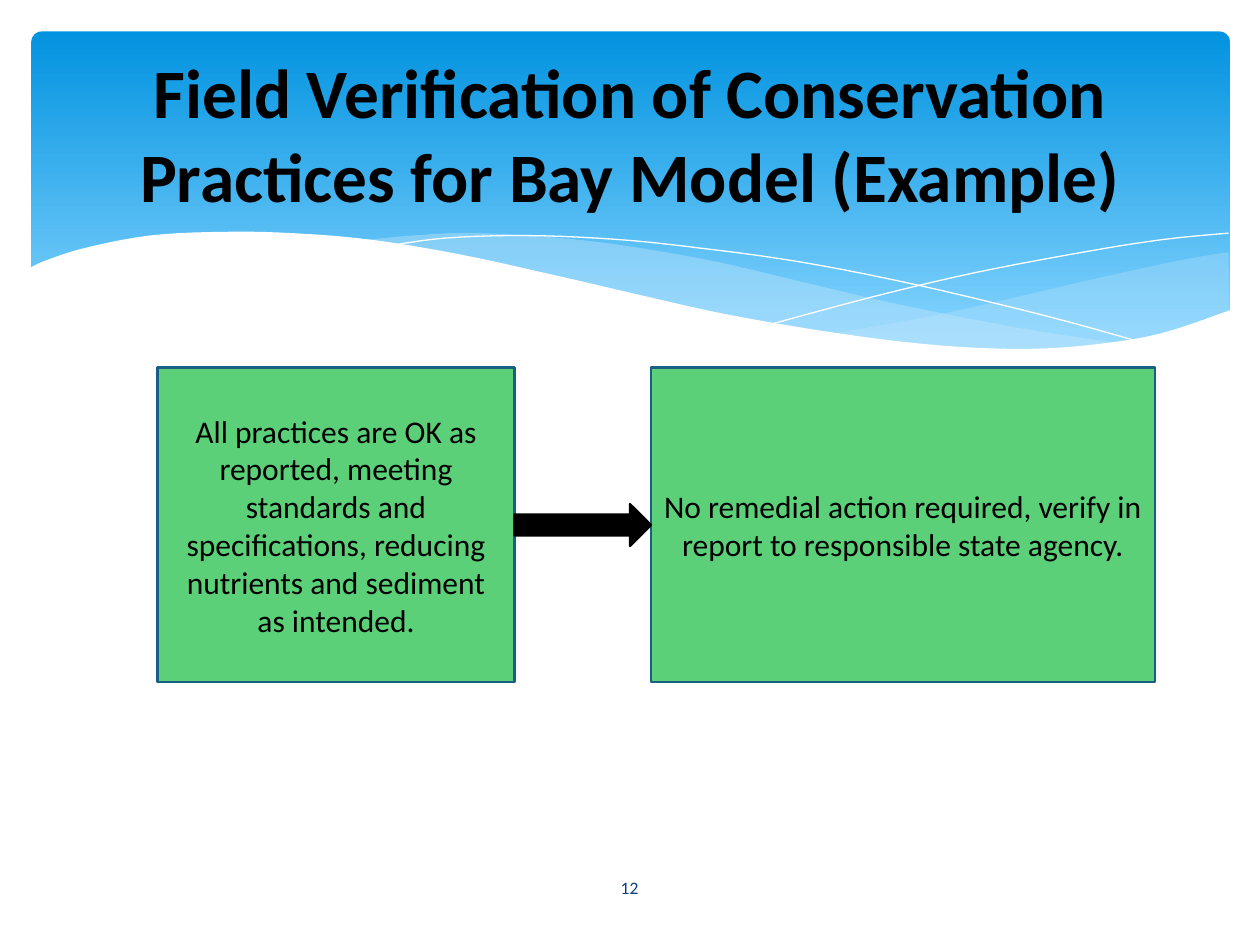
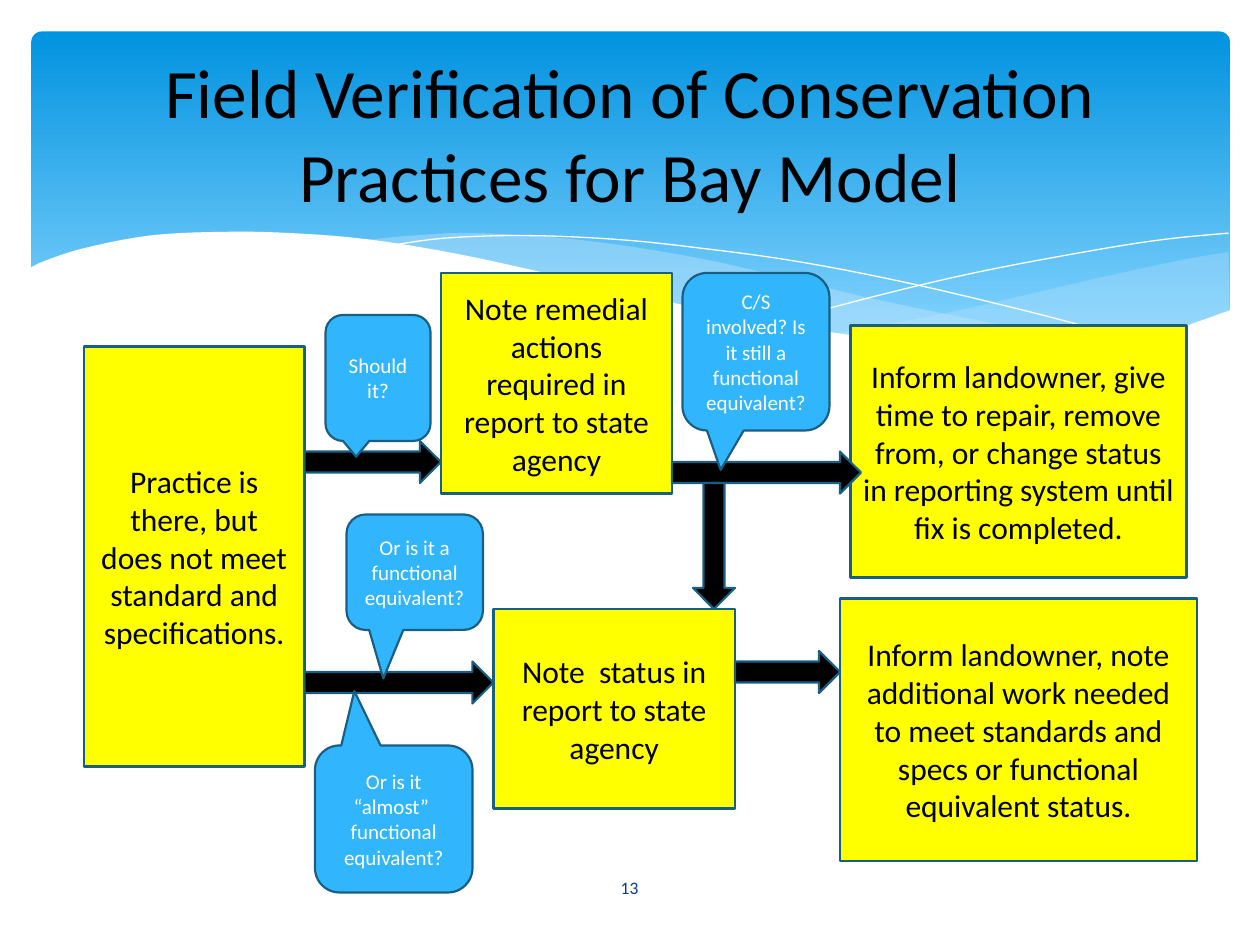
"""Build two slides on field checks of conservation practices."""
from dataclasses import dataclass
from typing import Optional

from lxml.etree import SubElement
from pptx import Presentation
from pptx.dml.color import RGBColor as Rgb
from pptx.enum.shapes import MSO_SHAPE as Kind
from pptx.enum.text import MSO_ANCHOR as Anchor, PP_ALIGN as Align
from pptx.oxml.ns import qn
from pptx.util import Pt

Point = tuple[float, float]
Frame = tuple[float, float, float, float]


@dataclass(frozen=True)
class Theme:
    font: str = "Calibri"
    ink: str = "000000"
    white: str = "FFFFFF"
    sky: str = "0293E0"
    haze: str = "83D3FE"
    mist: str = "C6E7FC"
    edge: str = "195F84"
    green: str = "5BD078"
    yellow: str = "FFFF00"
    blue: str = "31B6FD"
    navy: str = "073E87"
    head: float = 39.6
    body: float = 18
    note: float = 12
    foot: float = 10
    stroke: float = 1.25


THEME = Theme()


@dataclass(frozen=True)
class Wave:
    curves: tuple[tuple[Point, ...], ...]
    fill: Optional[str] = None
    alpha: int = 100


@dataclass(frozen=True)
class Item:
    frame: Frame
    fill: str
    text: str = ""
    kind: Kind = Kind.RECTANGLE
    edge: str = THEME.edge
    ink: str = THEME.ink
    size: float = THEME.body
    tail: Optional[Point] = None


@dataclass(frozen=True)
class Page:
    title: str
    bold: bool
    number: int
    items: tuple[Item, ...]


WAVES = (
    Wave((((702, 144), (673, 149), (620, 160.6), (542, 178.6), (476, 190.8)),
          ((476, 190.8), (507.6, 195.1), (545, 198.7), (586, 200),
           (628, 197.3), (663, 190.8), (702.7, 177.8))), THEME.mist, 29),
    Wave((((643, 196.6), (581, 187.2), (508.3, 172.8), (452.9, 159.8),
           (399.6, 147.6), (334.8, 137.5), (273.6, 133.2), (236.2, 134.6),
           (206, 137.5)),
          ((206, 137.5), (260.6, 146.2), (323.3, 159.8), (381.6, 172.8),
           (445, 185.8), (500.4, 194.4), (548, 199.4), (589, 200.2),
           (617, 199.4), (643, 196.6))), THEME.mist, 40),
    Wave((((222.5, 140.4), (254.2, 136.1), (299.5, 134.6), (352, 136.8),
           (400.3, 141.8), (458, 149.8), (523.4, 162.7), (598.3, 180.7),
           (653, 195.8)),)),
    Wave((((441.4, 185), (500.4, 169.2), (558.7, 155.5), (623.5, 143.3),
           (665.3, 136.8), (702, 133.2)),)),
    Wave((((703.4, 177.1), (662.4, 190.8), (621.4, 197.3), (582.5, 199.4),
           (535.7, 197.3), (481, 190.8), (416.9, 180), (362.2, 167.8),
           (321.8, 158.4), (262.8, 145.4), (210.2, 136.8), (165.6, 133.2),
           (127.4, 132.5), (85.7, 134.6), (48.2, 141.8), (25.9, 149),
           (16.6, 153.4)),
          ((16.6, 237), (703.4, 237))), THEME.white),
)


def box(frame: Frame, text: str, fill: str) -> Item:
    return Item(frame, fill, text)


def arrow(frame: Frame, kind: Kind = Kind.RIGHT_ARROW,
          edge: str = THEME.edge) -> Item:
    return Item(frame, THEME.ink, kind=kind, edge=edge)


def bubble(frame: Frame, text: str, tail: Optional[Point] = None) -> Item:
    return Item(frame, THEME.blue, text, Kind.ROUNDED_RECTANGULAR_CALLOUT,
                ink=THEME.white, size=THEME.note, tail=tail)


PAGES = (
    Page("Field Verification of Conservation Practices for Bay Model (Example)",
         True, 12, (
             box((90, 210, 204, 180),
                 "All practices are OK as reported, meeting standards and "
                 "specifications, reducing nutrients and sediment as intended.",
                 THEME.green),
             box((372, 210, 288, 180),
                 "No remedial action required, verify in report to "
                 "responsible state agency.", THEME.green),
             arrow((294, 288, 78, 24), edge=THEME.ink),
         )),
    Page("Field Verification of Conservation Practices for Bay Model",
         False, 13, (
             box((48, 198, 126, 240),
                 "Practice is there, but does not meet standard and "
                 "specifications.", THEME.yellow),
             box((252, 156, 132, 126),
                 "Note remedial actions required in report to state agency",
                 THEME.yellow),
             box((282, 348, 138, 114),
                 "Note  status in report to state agency", THEME.yellow),
             box((486, 186, 192, 144),
                 "Inform landowner, give time to repair, remove from, or "
                 "change status in reporting system until fix is completed.",
                 THEME.yellow),
             box((480, 342, 204, 150),
                 "Inform landowner, note additional work needed to meet "
                 "standards and specs or functional equivalent status.",
                 THEME.yellow),
             arrow((174, 252, 78, 24)),
             arrow((174, 378, 108, 24)),
             arrow((384, 258, 108, 24)),
             bubble((186, 180, 60, 72), "Should it?"),
             bubble((198, 294, 78, 66), "Or is it a functional equivalent?",
                    (-0.23, 0.92)),
             arrow((420, 372, 60, 24)),
             bubble((390, 156, 84, 90),
                    "C/S involved? Is it still a functional equivalent?",
                    (-0.24, 0.75)),
             bubble((180, 426, 90, 84),
                    "Or is it “almost”  functional equivalent?",
                    (-0.25, -0.87)),
             arrow((396, 276, 24, 72), Kind.DOWN_ARROW),
         )),
)


def place(frame: Frame) -> list[Pt]:
    return [Pt(side) for side in frame]


def paint(shape, fill: Optional[str], edge: Optional[str] = None,
          width: float = THEME.stroke) -> None:
    shape.shadow.inherit = False
    if fill:
        shape.fill.solid()
        shape.fill.fore_color.rgb = Rgb.from_string(fill)
    else:
        shape.fill.background()
    if edge:
        shape.line.color.rgb = Rgb.from_string(edge)
        shape.line.width = Pt(width)
    else:
        shape.line.fill.background()


def write(shape, text: str, size: float, ink: str, bold: bool = False) -> None:
    frame = shape.text_frame
    frame.word_wrap = True
    frame.vertical_anchor = Anchor.MIDDLE
    line = frame.paragraphs[0]
    line.alignment = Align.CENTER
    run = line.add_run()
    run.text = text
    run.font.name = THEME.font
    run.font.size = Pt(size)
    run.font.bold = bold
    run.font.color.rgb = Rgb.from_string(ink)


def label(slide, frame: Frame, text: str, size: float, ink: str,
          bold: bool = False) -> None:
    write(slide.shapes.add_textbox(*place(frame)), text, size, ink, bold)


def smooth(knots: tuple[Point, ...], steps: int = 5) -> list[Point]:
    if len(knots) < 3:
        return list(knots)
    ends = (knots[0], *knots, knots[-1])
    curve = [knots[0]]
    for a, b, c, d in zip(ends, ends[1:], ends[2:], ends[3:]):
        for step in range(1, steps + 1):
            t = step / steps
            x, y = (
                (2 * q + (r - p) * t + (2 * p - 5 * q + 4 * r - s) * t ** 2
                 + (3 * q - p - 3 * r + s) * t ** 3) / 2
                for p, q, r, s in zip(a, b, c, d))
            curve.append((x, y))
    return curve


def draw_wave(slide, wave: Wave) -> None:
    dots = [(Pt(x), Pt(y)) for knots in wave.curves for x, y in smooth(knots)]
    pen = slide.shapes.build_freeform(*dots[0])
    pen.add_line_segments(dots[1:], close=bool(wave.fill))
    shape = pen.convert_to_shape()
    paint(shape, wave.fill, None if wave.fill else THEME.white, 0)
    if wave.alpha < 100:
        tint = shape.element.spPr.find(f"{qn('a:solidFill')}/{qn('a:srgbClr')}")
        SubElement(tint, qn("a:alpha")).set("val", str(wave.alpha * 1000))


def draw_band(slide) -> None:
    band = slide.shapes.add_shape(Kind.ROUNDED_RECTANGLE,
                                  *place((18, 18, 684.7, 194.4)))
    band.adjustments[0] = 0.03
    paint(band, None)
    band.fill.gradient()
    band.fill.gradient_angle = 270
    stops = zip(band.fill.gradient_stops, (THEME.sky, THEME.haze), (0, 0.9))
    for stop, tint, spot in stops:
        stop.color.rgb = Rgb.from_string(tint)
        stop.position = spot
    for wave in WAVES:
        draw_wave(slide, wave)


def draw_item(slide, item: Item) -> None:
    shape = slide.shapes.add_shape(item.kind, *place(item.frame))
    paint(shape, item.fill, item.edge)
    if item.tail:
        shape.adjustments[0], shape.adjustments[1] = item.tail
    if item.text:
        write(shape, item.text, item.size, item.ink)


def draw_page(deck, page: Page) -> None:
    slide = deck.slides.add_slide(deck.slide_layouts[6])
    draw_band(slide)
    label(slide, (36, 26.6, 648, 98.6), page.title, THEME.head, THEME.ink,
          page.bold)
    for item in page.items:
        draw_item(slide, item)
    label(slide, (314, 492.5, 91.5, 28.8), str(page.number), THEME.foot,
          THEME.navy)


def main() -> None:
    deck = Presentation()
    deck.slide_width, deck.slide_height = Pt(720), Pt(540)
    for page in PAGES:
        draw_page(deck, page)
    deck.save("out.pptx")


if __name__ == "__main__":
    main()
